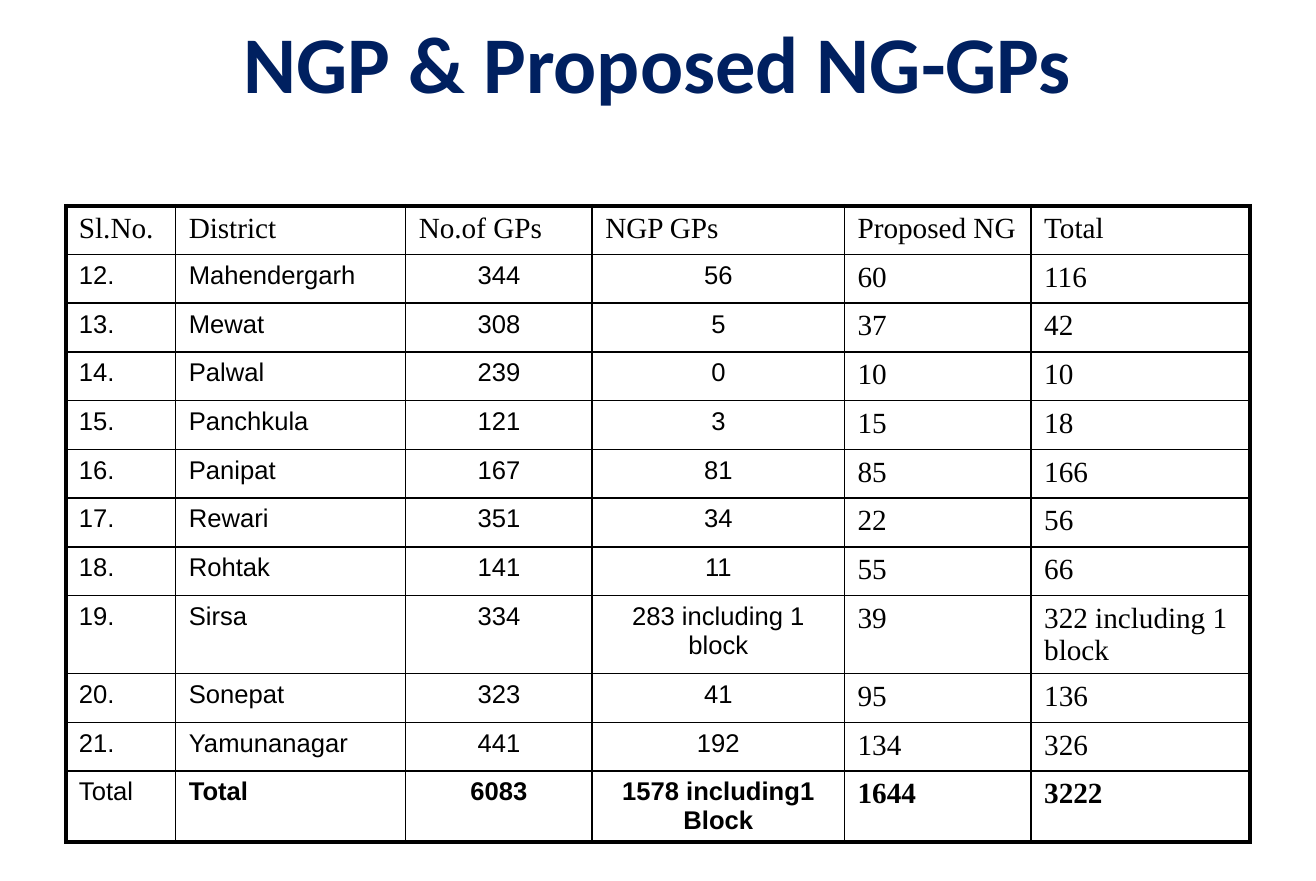
from lxml import etree
from pptx import Presentation
from pptx import util as u
from pptx.dml.color import RGBColor
from pptx.enum import text
from pptx.oxml import ns

HEADER = ["Sl.No.", "District", "No.of GPs", "NGP GPs", "Proposed NG", "Total"]
DISTRICTS = [
    ("Mahendergarh", "344", "56", "60", "116"),
    ("Mewat", "308", "5", "37", "42"),
    ("Palwal", "239", "0", "10", "10"),
    ("Panchkula", "121", "3", "15", "18"),
    ("Panipat", "167", "81", "85", "166"),
    ("Rewari", "351", "34", "22", "56"),
    ("Rohtak", "141", "11", "55", "66"),
    ("Sirsa", "334", "283 including 1 block", "39", "322 including 1 block"),
    ("Sonepat", "323", "41", "95", "136"),
    ("Yamunanagar", "441", "192", "134", "326"),
]
TOTALS = ["Total", "Total", "6083", "1578 including1 Block", "1644", "3222"]
FIRST_NUMBER = 12
COLUMN_WIDTHS = [2.12, 4.44, 3.6, 4.87, 3.6, 4.23]
ROW_HEIGHT = 0.94


def rgb(value):
    """Return the colour for a hex string."""
    return RGBColor.from_string(value)


def set_font(p, name, size, color, bold=False):
    """Format the font of a whole paragraph."""
    p.font.name = name
    p.font.size = u.Pt(size)
    p.font.bold = bold
    p.font.color.rgb = rgb(color)


def set_space_before(p, percent):
    """Set the space before a paragraph as a share of the line."""
    spacing = etree.Element(ns.qn("a:spcBef"))
    etree.SubElement(spacing, ns.qn("a:spcPct"), val=str(percent * 1000))
    p._p.get_or_add_pPr().insert(0, spacing)


def set_borders(cell, widths):
    """Draw black cell borders with the given widths in points."""
    tc_pr = cell._tc.get_or_add_tcPr()
    for i, (side, width) in enumerate(widths.items()):
        line = etree.Element(ns.qn(f"a:ln{side}"), w=str(u.Pt(width)))
        fill = etree.SubElement(line, ns.qn("a:solidFill"))
        etree.SubElement(fill, ns.qn("a:srgbClr"), val="000000")
        tc_pr.insert(i, line)


def set_fill(cell, is_header):
    """Leave a header cell clear and make any other cell white."""
    if is_header:
        cell.fill.background()
    else:
        cell.fill.solid()
        cell.fill.fore_color.rgb = rgb("FFFFFF")


def add_title(s, content):
    """Fill and place the title placeholder."""
    sp = s.shapes.title
    sp.left, sp.top, sp.width, sp.height = u.Cm(1.27), 0, u.Cm(22.86), u.Cm(2.36)
    tf = sp.text_frame
    tf.text = content
    tf.vertical_anchor = text.MSO_ANCHOR.MIDDLE
    p = tf.paragraphs[0]
    p.alignment = text.PP_ALIGN.CENTER
    set_font(p, "Calibri", 44, "002060", True)


def format_cell(cell, content, row, col, last_row, last_col):
    """Write one table cell with its font, alignment, fill and borders."""
    cell.text = content
    set_fill(cell, row == 0)
    p = cell.text_frame.paragraphs[0]
    bold = row == last_row and col > 0
    if row == 0 or col > 3:
        set_font(p, "Times New Roman", 16, "000000", bold)
        set_space_before(p, 20)
    else:
        set_font(p, "Arial", 14, "000000", bold)
        if col > 1:
            p.alignment = text.PP_ALIGN.CENTER
        elif bold:
            p.alignment = text.PP_ALIGN.JUSTIFY
    edges = {"L": col == 0, "R": col == last_col, "T": row == 0, "B": row == last_row}
    set_borders(cell, {side: 2.25 if outer else 1 for side, outer in edges.items()})


def add_district_table(s, rows):
    """Add the bordered table of districts."""
    frame = s.shapes.add_table(
        len(rows), len(COLUMN_WIDTHS), u.Cm(1.27), u.Cm(3.97),
        u.Cm(sum(COLUMN_WIDTHS)), u.Cm(ROW_HEIGHT * len(rows)))
    table = frame.table
    table.first_row = table.horz_banding = False
    for column, width in zip(table.columns, COLUMN_WIDTHS):
        column.width = u.Cm(width)
    for r, values in enumerate(rows):
        table.rows[r].height = u.Cm(ROW_HEIGHT)
        for c, value in enumerate(values):
            format_cell(table.cell(r, c), value, r, c, len(rows) - 1, len(values) - 1)


def main():
    """Build and save the slide."""
    prs = Presentation()
    prs.slide_width, prs.slide_height = u.Cm(25.4), u.Cm(17)
    s = prs.slides.add_slide(prs.slide_layouts[5])
    add_title(s, "NGP & Proposed NG-GPs")
    numbered = [[f"{n}.", *d] for n, d in enumerate(DISTRICTS, FIRST_NUMBER)]
    add_district_table(s, [HEADER, *numbered, TOTALS])
    prs.save("out.pptx")


if __name__ == "__main__":
    main()
